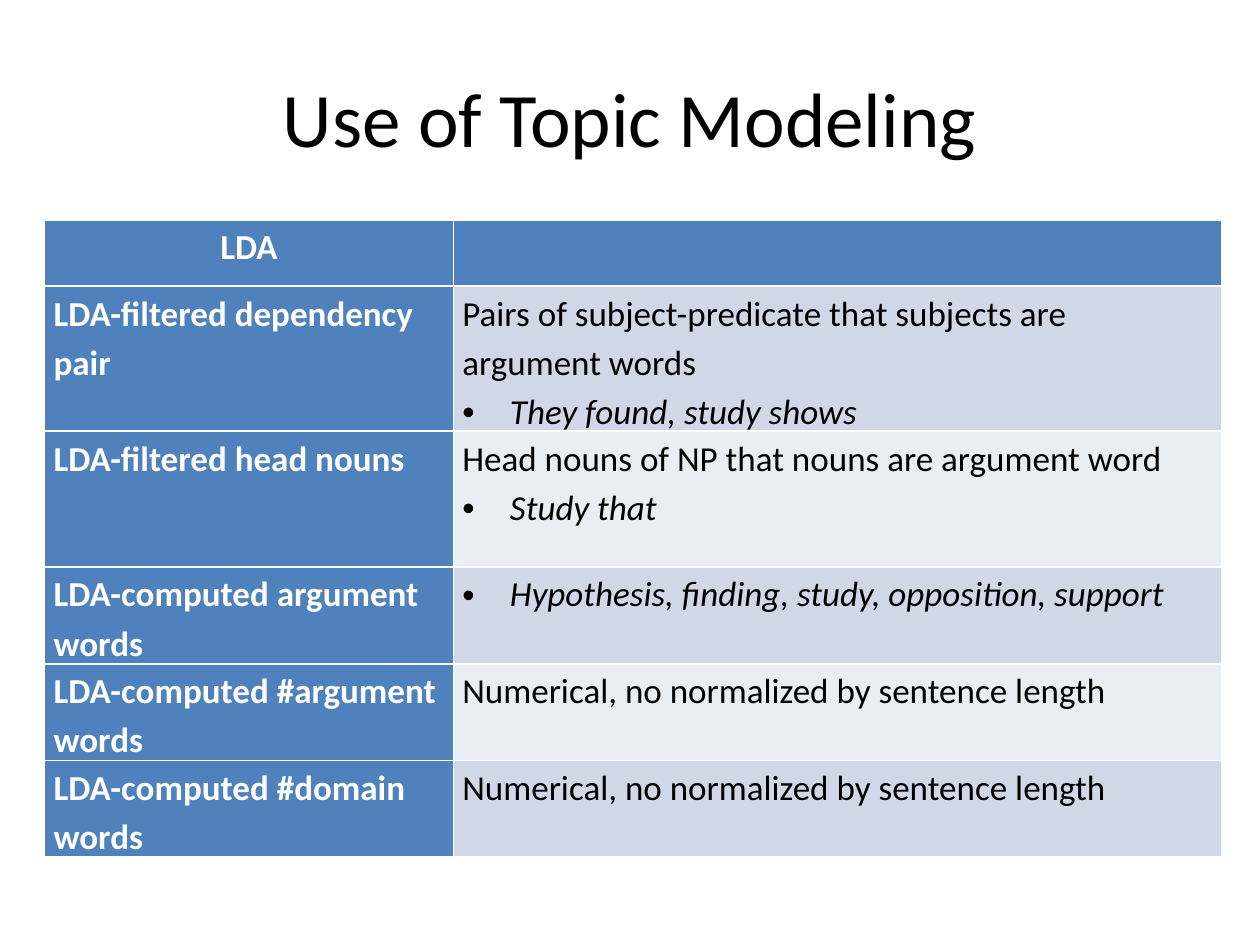
from lxml import etree
from pptx import Presentation
from pptx.dml.color import RGBColor
from pptx.enum.text import MSO_ANCHOR, PP_ALIGN
from pptx.oxml.ns import qn
from pptx.util import Cm, Pt

CENTER, LEFT = PP_ALIGN.CENTER, PP_ALIGN.LEFT
MIDDLE = MSO_ANCHOR.MIDDLE
BLACK = RGBColor(0x00, 0x00, 0x00)
WHITE = RGBColor(0xFF, 0xFF, 0xFF)
BLUE = RGBColor(0x4F, 0x81, 0xBD)
BANDS = [RGBColor(0xD0, 0xD8, 0xE8), RGBColor(0xE9, 0xED, 0xF4)]

TITLE = "Use of Topic Modeling"
HEADER = "LDA"
# feature, description, example, row height in cm
FEATURES = [
    ("LDA-filtered dependency pair",
     "Pairs of subject-predicate that subjects are argument words",
     "They found, study shows", 2.74),
    ("LDA-filtered head nouns",
     "Head nouns of NP that nouns are argument word",
     "Study that", 2.74),
    ("LDA-computed argument words", None,
     "Hypothesis, finding, study, opposition, support", 1.34),
    ("LDA-computed #argument words",
     "Numerical, no normalized by sentence length", None, 1.34),
    ("LDA-computed #domain words",
     "Numerical, no normalized by sentence length", None, 1.34),
]
HEADER_HEIGHT = 1.34
COLUMN_WIDTHS = [8.24, 15.49]
INDENT = Cm(0.96)

LABEL = {"size": Pt(20), "bold": True, "italic": False}
DESCRIPTION = {"size": Pt(20), "bold": False, "italic": False}
EXAMPLE = {"size": Pt(20), "bold": False, "italic": True}


def write(p, text, color, font, align=LEFT):
    p.alignment = align
    r = p.add_run()
    r.text = text
    r.font.name = "Calibri"
    r.font.color.rgb = color
    for name, value in font.items():
        setattr(r.font, name, value)


def add_bullet(p):
    pPr = p._p.get_or_add_pPr()
    pPr.set("marL", str(INDENT))
    pPr.set("indent", str(-INDENT))
    etree.SubElement(pPr, qn("a:buFont")).set("typeface", "Arial")
    etree.SubElement(pPr, qn("a:buChar")).set("char", "•")


def fill_cell(cell, fill, color, lines, align=LEFT):
    """Write (text, font) lines; lines in the example font get a bullet."""
    cell.fill.solid()
    cell.fill.fore_color.rgb = fill
    cell.margin_left = cell.margin_right = Cm(0.18)
    cell.margin_top = cell.margin_bottom = 0
    tf = cell.text_frame
    shown = [line for line in lines if line[0]]
    for i, (text, font) in enumerate(shown):
        p = tf.add_paragraph() if i else tf.paragraphs[0]
        p.line_spacing = 1.15
        if font is EXAMPLE:
            add_bullet(p)
        write(p, text, color, font, align)


prs = Presentation()
prs.slide_width, prs.slide_height = Cm(25.4), Cm(19.05)
s = prs.slides.add_slide(prs.slide_layouts[6])

tf = s.shapes.add_textbox(Cm(1.27), Cm(0.76), Cm(22.86), Cm(3.18)).text_frame
tf.word_wrap = True
tf.vertical_anchor = MIDDLE
write(tf.paragraphs[0], TITLE, BLACK, {"size": Pt(44)}, CENTER)

heights = [HEADER_HEIGHT] + [feature[-1] for feature in FEATURES]
table = s.shapes.add_table(len(heights), len(COLUMN_WIDTHS), Cm(0.9), Cm(4.43),
                           Cm(sum(COLUMN_WIDTHS)), Cm(sum(heights))).table
table.first_col = True
for column, width in zip(table.columns, COLUMN_WIDTHS):
    column.width = Cm(width)
for row, height in zip(table.rows, heights):
    row.height = Cm(height)

fill_cell(table.cell(0, 0), BLUE, WHITE, [(HEADER, LABEL)], CENTER)
fill_cell(table.cell(0, 1), BLUE, WHITE, [])
for i, (label, description, example, _) in enumerate(FEATURES):
    fill_cell(table.cell(i + 1, 0), BLUE, WHITE, [(label, LABEL)])
    fill_cell(table.cell(i + 1, 1), BANDS[i % 2], BLACK,
              [(description, DESCRIPTION), (example, EXAMPLE)])

prs.save("out.pptx")
